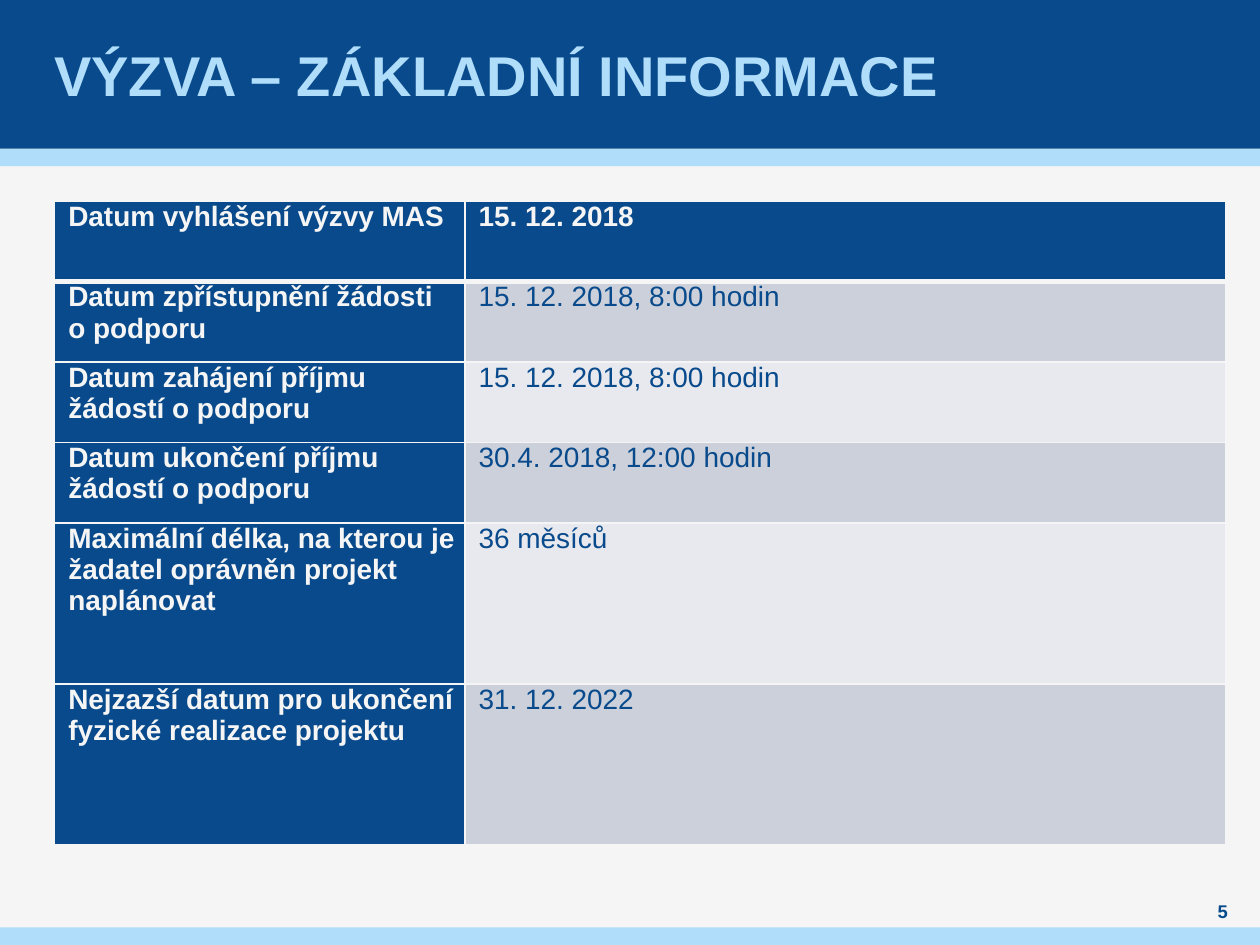
from lxml import etree
from pptx import Presentation
from pptx.dml.color import RGBColor
from pptx.enum.shapes import MSO_SHAPE
from pptx.enum.text import MSO_ANCHOR, MSO_AUTO_SIZE, PP_ALIGN
from pptx.oxml.ns import qn
from pptx.util import Pt

RECT = MSO_SHAPE.RECTANGLE
MIDDLE = MSO_ANCHOR.MIDDLE
NO_AUTOFIT = MSO_AUTO_SIZE.NONE
LEFT, CENTER = PP_ALIGN.LEFT, PP_ALIGN.CENTER

FONT = "Arial"
COLORS = {
    "navy": "084A8B",
    "sky": "AFDDFA",
    "paper": "F5F5F5",
    "band_dark": "CCD0DA",
    "band_light": "E7E9EE",
}
ROWS = [
    ("Datum vyhlášení výzvy MAS", "15. 12. 2018"),
    ("Datum zpřístupnění žádosti o podporu", "15. 12. 2018, 8:00 hodin"),
    ("Datum zahájení příjmu žádostí o podporu", "15. 12. 2018, 8:00 hodin"),
    ("Datum ukončení příjmu žádostí o podporu", "30.4. 2018, 12:00 hodin"),
    ("Maximální délka, na kterou je žadatel oprávněn projekt naplánovat", "36 měsíců"),
    ("Nejzazší datum pro ukončení fyzické realizace projektu", "31. 12. 2022"),
]
COL_WIDTHS = [234.4, 434.6]
ROW_HEIGHTS = [46] * 4 + [92] * 2


def rgb(name):
    return RGBColor.from_string(COLORS[name])


def write_text(tf, text, size, color, bold=False, align=LEFT, spacing=0, indent=0):
    tf.word_wrap = True
    p = tf.paragraphs[0]
    p.alignment = align
    p.space_before = p.space_after = Pt(spacing)
    if indent:
        p._p.get_or_add_pPr().set("marL", str(Pt(indent)))
    r = p.add_run()
    r.text = text
    r.font.name = FONT
    r.font.size = Pt(size)
    r.font.bold = bold
    r.font.color.rgb = rgb(color)


def set_margins(frame, side):
    frame.margin_left = frame.margin_right = Pt(side)
    frame.margin_top = frame.margin_bottom = 0


def add_band(s, top, height, color):
    sp = s.shapes.add_shape(RECT, 0, Pt(top), Pt(720), Pt(height))
    sp.shadow.inherit = False
    sp.fill.solid()
    sp.fill.fore_color.rgb = rgb(color)
    sp.line.fill.background()


def add_title(s, text):
    sp = s.shapes.title
    sp.left, sp.top, sp.width, sp.height = Pt(28.2), 0, Pt(663), Pt(85)
    tf = sp.text_frame
    tf.auto_size = NO_AUTOFIT
    tf.vertical_anchor = MIDDLE
    set_margins(tf, 2.8)
    write_text(tf, text, 32, "sky", bold=True)


def add_page_number(s, number):
    sp = s.shapes.add_textbox(Pt(680.4), Pt(513.4), Pt(36.7), Pt(14.4))
    tf = sp.text_frame
    tf.vertical_anchor = MIDDLE
    set_margins(tf, 0)
    write_text(tf, number, 10.5, "navy", bold=True, align=CENTER)


def set_borders(cell, **widths):
    tcPr = cell._tc.get_or_add_tcPr()
    for side in "LRTB":
        ln = etree.SubElement(tcPr, qn(f"a:ln{side}"), w=str(Pt(widths.get(side, 1))))
        fill = etree.SubElement(ln, qn("a:solidFill"))
        etree.SubElement(fill, qn("a:srgbClr"), val=COLORS["paper"])


def format_cell(cell, text, row, col):
    is_header = row == 0 or col == 0
    if is_header:
        fill = "navy"
    else:
        fill = "band_dark" if row % 2 else "band_light"
    set_borders(cell, T=3 if row == 1 else 1, B=3 if row == 0 else 1)
    cell.fill.solid()
    cell.fill.fore_color.rgb = rgb(fill)
    set_margins(cell, 5)
    write_text(cell.text_frame, text, 16, "paper" if is_header else "navy",
               bold=is_header, spacing=3, indent=2.85)


def add_info_table(s):
    frame = s.shapes.add_table(len(ROWS), len(COL_WIDTHS), Pt(31.2), Pt(115),
                               Pt(sum(COL_WIDTHS)), Pt(sum(ROW_HEIGHTS)))
    table = frame.table
    for column, width in zip(table.columns, COL_WIDTHS):
        column.width = Pt(width)
    for row, height in zip(table.rows, ROW_HEIGHTS):
        row.height = Pt(height)
    for i, texts in enumerate(ROWS):
        for j, text in enumerate(texts):
            format_cell(table.cell(i, j), text, i, j)


def main():
    prs = Presentation()
    prs.slide_width, prs.slide_height = Pt(720), Pt(540)
    s = prs.slides.add_slide(prs.slide_layouts[5])
    s.background.fill.solid()
    s.background.fill.fore_color.rgb = rgb("paper")
    add_band(s, 85, 10, "sky")
    add_band(s, 0, 85, "navy")
    add_band(s, 530, 10, "sky")
    title = s.shapes.title._element
    title.getparent().append(title)
    add_title(s, "VÝZVA – ZÁKLADNÍ INFORMACE")
    add_page_number(s, "5")
    add_info_table(s)
    prs.save("out.pptx")


if __name__ == "__main__":
    main()
